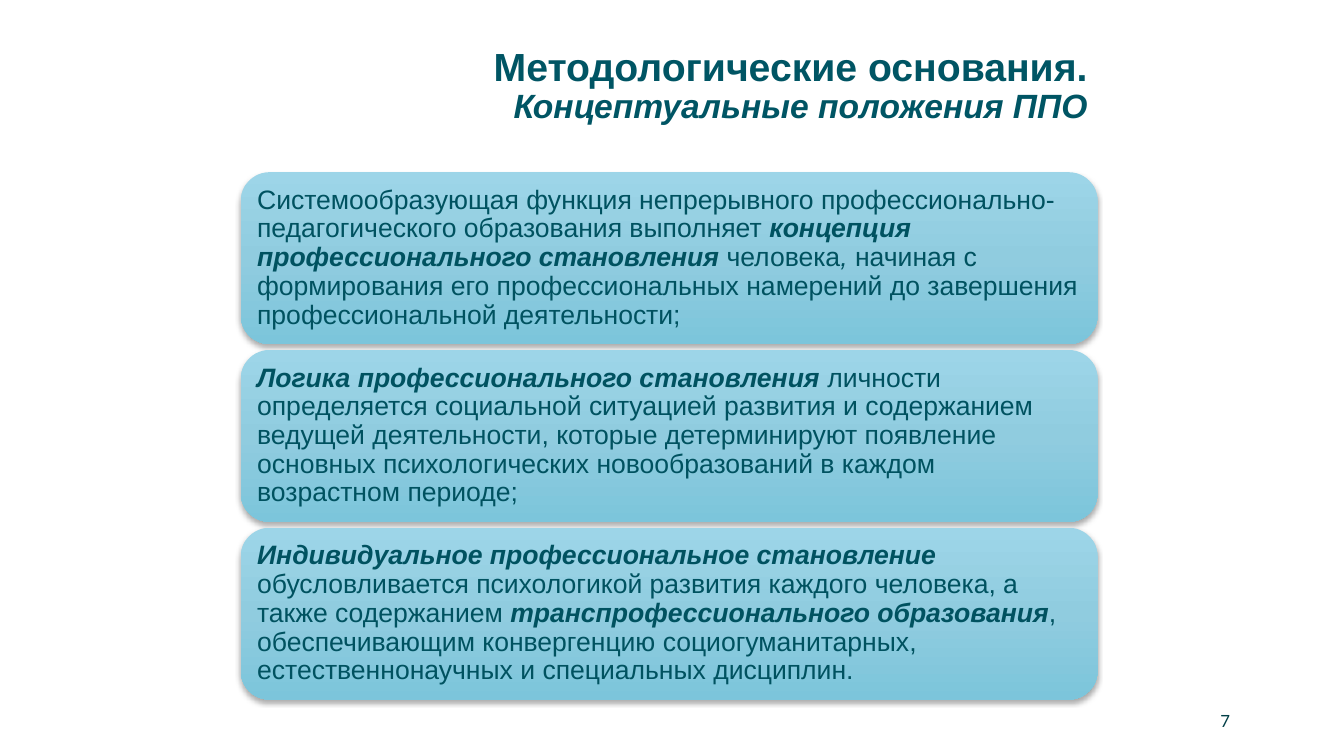
"""Build the slide on the conceptual principles of professional education."""
from lxml.etree import SubElement
from pptx import Presentation
from pptx.dml.color import RGBColor
from pptx.enum.shapes import MSO_SHAPE
from pptx.enum.text import MSO_ANCHOR, PP_ALIGN
from pptx.oxml.ns import qn
from pptx.util import Cm, Pt

PLAIN = {"size": Pt(19), "bold": False, "italic": False}
ITALIC = {**PLAIN, "italic": True}
STRONG = {**ITALIC, "bold": True}
HEADING = {"size": Pt(28), "bold": True, "italic": False}
SUBHEADING = {"size": Pt(24), "bold": True, "italic": True}
NUMBER = {"size": Pt(12), "bold": False, "italic": False}

TITLE = [
    ("Методологические основания.\v", HEADING),
    ("Концептуальные положения ППО", SUBHEADING),
]
PRINCIPLES = [
    [
        ("Системообразующая функция непрерывного профессионально-педагогического "
         "образования выполняет ", PLAIN),
        ("концепция профессионального становления ", STRONG),
        ("человека", PLAIN),
        (",", ITALIC),
        (" начиная с формирования его профессиональных намерений до завершения "
         "профессиональной деятельности;", PLAIN),
    ],
    [
        ("Логика профессионального становления ", STRONG),
        ("личности определяется социальной ситуацией развития и содержанием "
         "ведущей деятельности, которые детерминируют появление основных "
         "психологических новообразований в каждом возрастном периоде;", PLAIN),
    ],
    [
        ("Индивидуальное профессиональное становление ", STRONG),
        ("обусловливается психологикой развития каждого человека, а также "
         "содержанием ", PLAIN),
        ("транспрофессионального образования", STRONG),
        (", обеспечивающим конвергенцию социогуманитарных, естественнонаучных "
         "и специальных дисциплин.", PLAIN),
    ],
]
PAGE_NUMBER = [("7", NUMBER)]

COLORS = {
    "title": "005564",
    "text": "005260",
    "number": "023F47",
    "shadow": "000000",
}
GRADIENT = [(0, "9DD5E8"), (50, "90CCDF"), (100, "7CC5DB")]

CARD_LEFT, CARD_TOP = Cm(6.07), Cm(4.34)
CARD_WIDTH, CARD_HEIGHT = Cm(21.59), Cm(4.33)
CARD_STEP = Cm(4.48)
CARD_INSET = Cm(0.2)


def write(text_frame, parts, color, alignment, font_name="Arial", line_spacing=0.9):
    """Fill the frame's first paragraph with formatted runs."""
    text_frame.word_wrap = True
    paragraph = text_frame.paragraphs[0]
    paragraph.alignment = alignment
    paragraph.line_spacing = line_spacing
    paragraph.space_before = Pt(0)
    for text, font_format in parts:
        run = paragraph.add_run()
        run.text = text.rstrip("\v")
        run.font.name = font_name
        run.font.color.rgb = RGBColor.from_string(color)
        for name, value in font_format.items():
            setattr(run.font, name, value)
        if text.endswith("\v"):
            paragraph.add_line_break()


def add_color(parent, color):
    """Add an RGB colour element to the parent."""
    return SubElement(parent, qn("a:srgbClr"), val=color)


def style_card(shape):
    """Give the card its gradient and soft shadow."""
    properties = shape._element.spPr
    gradient = SubElement(properties, qn("a:gradFill"), rotWithShape="1")
    stops = SubElement(gradient, qn("a:gsLst"))
    for percent, color in GRADIENT:
        add_color(SubElement(stops, qn("a:gs"), pos=str(percent * 1000)), color)
    SubElement(gradient, qn("a:lin"), ang="5400000", scaled="0")
    shape.line.fill.background()
    shape.shadow.inherit = False
    shadow = SubElement(
        properties.find(qn("a:effectLst")), qn("a:outerShdw"),
        blurRad=str(Pt(3.5)), dist=str(Pt(2.2)), dir="5400000", rotWithShape="0",
    )
    SubElement(add_color(shadow, COLORS["shadow"]), qn("a:alpha"), val="32000")


def add_card(slide, index, parts):
    """Add one principle card at its place in the stack."""
    card = slide.shapes.add_shape(
        MSO_SHAPE.ROUNDED_RECTANGLE,
        CARD_LEFT, CARD_TOP + index * CARD_STEP, CARD_WIDTH, CARD_HEIGHT,
    )
    style_card(card)
    text_frame = card.text_frame
    text_frame.vertical_anchor = MSO_ANCHOR.MIDDLE
    for side in ("left", "top", "right", "bottom"):
        setattr(text_frame, f"margin_{side}", CARD_INSET)
    write(text_frame, parts, COLORS["text"], PP_ALIGN.LEFT)


def main():
    """Create and save the presentation."""
    presentation = Presentation()
    presentation.slide_width, presentation.slide_height = Cm(33.87), Cm(19.05)
    slide = presentation.slides.add_slide(presentation.slide_layouts[5])

    title = slide.shapes.title
    title.left, title.top, title.width, title.height = Cm(10.57), Cm(1.07), Cm(17.09), Cm(3.2)
    title.text_frame.vertical_anchor = MSO_ANCHOR.TOP
    write(title.text_frame, TITLE, COLORS["title"], PP_ALIGN.RIGHT)

    for index, parts in enumerate(PRINCIPLES):
        add_card(slide, index, parts)

    number = slide.shapes.add_textbox(Cm(30.05), Cm(17.65), Cm(1.2), Cm(1.02))
    number.text_frame.vertical_anchor = MSO_ANCHOR.MIDDLE
    write(number.text_frame, PAGE_NUMBER, COLORS["number"], PP_ALIGN.RIGHT, "Lato", 1.0)

    presentation.save("out.pptx")


if __name__ == "__main__":
    main()
